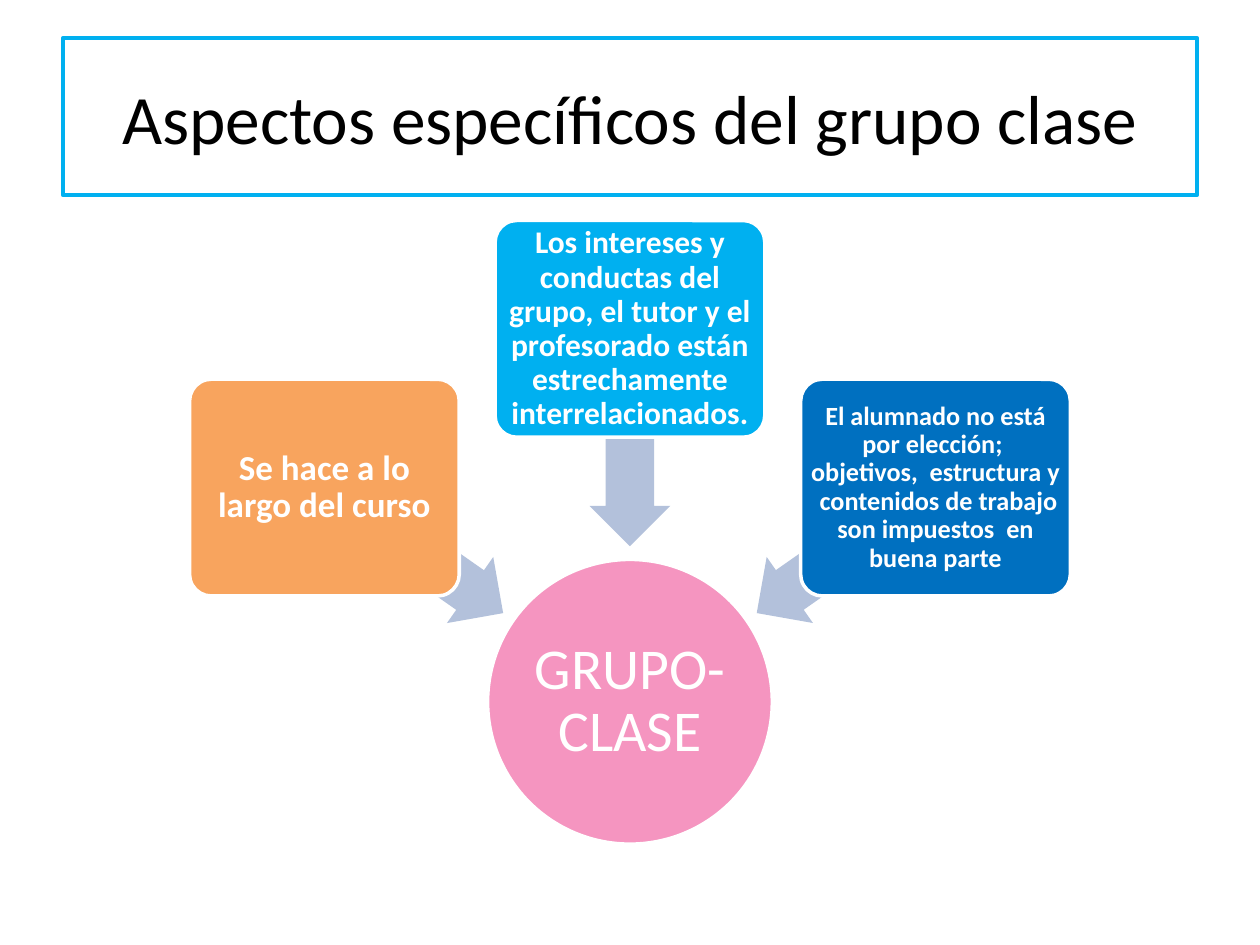
from pptx import Presentation
from pptx.dml.color import RGBColor
from pptx.enum.shapes import MSO_SHAPE as Shape
from pptx.enum.text import MSO_ANCHOR as Anchor, PP_ALIGN as Align
from pptx.util import Inches, Pt

THEME = {
    "font": "Calibri",
    "black": RGBColor.from_string("000000"),
    "white": RGBColor.from_string("FFFFFF"),
    "pink": RGBColor.from_string("F595C0"),
    "orange": RGBColor.from_string("F8A45E"),
    "sky": RGBColor.from_string("00B0F0"),
    "blue": RGBColor.from_string("0070C0"),
    "arrow": RGBColor.from_string("B3C1DB"),
    "title_size": 39.6,
    "hub_size": 33,
}

deck = Presentation()
deck.slide_width, deck.slide_height = Inches(10), Inches(7.5)
slide = deck.slides.add_slide(deck.slide_layouts[5])

# Grid of 100 columns by 75 rows
COL, ROW = deck.slide_width / 100, deck.slide_height / 75
MIDDLE = 50


def add_centred(preset, x, y, width, height, fill):
    """Add a filled shape whose centre is at column x, row y."""
    part = slide.shapes.add_shape(
        preset, int((x - width / 2) * COL), int((y - height / 2) * ROW),
        int(width * COL), int(height * ROW))
    part.shadow.inherit = False
    part.fill.solid()
    part.fill.fore_color.rgb = THEME[fill]
    part.line.fill.background()
    return part


def write(part, text, size, color="white", bold=False, inset=0.4):
    frame = part.text_frame
    frame.text = text
    frame.word_wrap = True
    frame.vertical_anchor = Anchor.MIDDLE
    frame.margin_left = frame.margin_right = int(inset * COL)
    frame.margin_top = frame.margin_bottom = int(inset * ROW)
    paragraph = frame.paragraphs[0]
    paragraph.alignment = Align.CENTER
    font = paragraph.runs[0].font
    font.name, font.size, font.bold = THEME["font"], Pt(size), bold
    font.color.rgb = THEME[color]
    return paragraph


title = slide.shapes.title
title.left, title.top = int(5 * COL), int(3 * ROW)
title.width, title.height = int(90 * COL), int(12.5 * ROW)
title.line.color.rgb = THEME["sky"]
title.line.width = Pt(2.25)
write(title, "Aspectos específicos del grupo clase", THEME["title_size"],
      color="black", inset=1)

hub = add_centred(Shape.OVAL, MIDDLE, 55.7, 22.6, 22.6, "pink")
hub.line.color.rgb = THEME["white"]
hub.line.width = Pt(2)
write(hub, "GRUPO-CLASE", THEME["hub_size"], inset=0.2).line_spacing = 0.9

# side of the hub, box row, arrow row, arrow rotation, fill, text size, text
aspects = [
    (-1, 38.7, 43.7, 215, "orange", 20, "Se hace a lo largo del curso"),
    (0, 26.1, 34.7, 270, "sky", 18,
     "Los intereses y conductas del grupo, el tutor y el profesorado están "
     "estrechamente interrelacionados."),
    (1, 38.7, 43.7, 325, "blue", 15,
     "El alumnado no está por elección;  objetivos,  estructura y  contenidos "
     "de trabajo son impuestos  en buena parte"),
]
for side, box_row, arrow_row, rotation, fill, size, text in aspects:
    arrow = add_centred(Shape.LEFT_ARROW, MIDDLE + side * 17.15, arrow_row,
                        17.3, 6.4, "arrow")
    arrow.adjustments[0], arrow.adjustments[1] = 0.6, 0.5
    arrow.rotation = rotation

    box = add_centred(Shape.ROUNDED_RECTANGLE, MIDDLE + side * 24.25, box_row,
                      21.4, 17.2, fill)
    box.adjustments[0] = 0.1
    box.line.color.rgb = THEME["white"]
    box.line.width = Pt(2)
    write(box, text, size, bold=True, inset=0.3).line_spacing = 0.9

deck.save("out.pptx")
